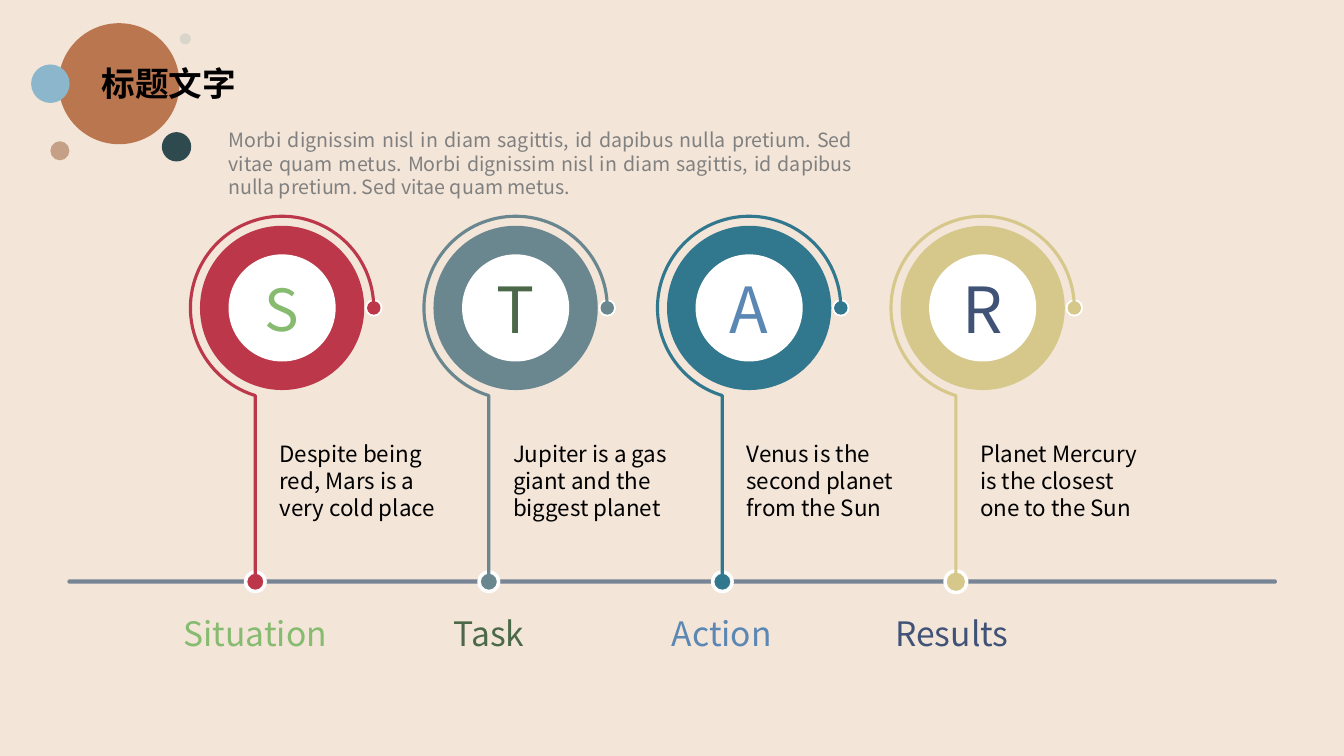
from math import cos, radians, sin

from lxml import etree
from pptx import Presentation
from pptx.dml.color import RGBColor
from pptx.enum import shapes, text
from pptx.oxml import ns
from pptx.util import Cm, Pt

FONT = "Noto Sans CJK SC"
COLOURS = {
    "sand": "F3E5D8", "white": "FFFFFF", "black": "000000", "grey": "808080",
    "slate": "778495", "red": "BD374A", "steel": "6A868F", "teal": "31778E",
    "straw": "D6C88B", "lime": "86BB70", "forest": "4B6949", "blue": "5B87B4",
    "navy": "405377", "copper": "BA764F", "sky": "8BB6CB", "tan": "C5A086",
    "pine": "2E4A4E", "pearl": "D9D5CA",
}
TITLE = "标题文字"
INTRO = ("Morbi dignissim nisl in diam sagittis, id dapibus nulla pretium. "
         "Sed vitae quam metus. Morbi dignissim nisl in diam sagittis, "
         "id dapibus nulla pretium. Sed vitae quam metus.")
# letter, letter size, label, label centre, description, ring colour, text colour
STEPS = [
    ("S", 41.4, "Situation", 6.43, "Despite being red, Mars is a very cold place",
     "red", "lime"),
    ("T", 45.4, "Task", 12.33, "Jupiter is a gas giant and the biggest planet",
     "steel", "forest"),
    ("A", 45.4, "Action", 18.19, "Venus is the second planet from the Sun",
     "teal", "blue"),
    ("R", 45.4, "Results", 23.99, "Planet Mercury is the closest one to the Sun",
     "straw", "navy"),
]
# centre x, centre y, diameter, colour
BUBBLES = [
    (3.0, 2.11, 3.05, "copper"), (1.27, 2.11, 0.97, "sky"),
    (1.51, 3.8, 0.48, "tan"), (4.45, 3.7, 0.74, "pine"),
    (4.67, 0.98, 0.28, "pearl"),
]

FIRST_X, STEP_X, CENTRE_Y = 7.11, 5.885, 7.76
RING_RADIUS, RING_END = 2.31, -253
BASE_Y = 14.66
INSET = 0.33


def colour(name):
    return RGBColor.from_string(COLOURS[name])


def paint(shape, fill=None, line=None, width=1.5):
    shape.shadow.inherit = False
    if fill:
        shape.fill.solid()
        shape.fill.fore_color.rgb = colour(fill)
    else:
        shape.fill.background()
    if line:
        shape.line.color.rgb = colour(line)
        shape.line.width = Pt(width)
    else:
        shape.line.fill.background()


def add_circle(parent, x, y, diameter, fill, line=None):
    """Draw a circle around the centre (x, y)."""
    circle = parent.add_shape(
        shapes.MSO_SHAPE.OVAL, Cm(x - diameter / 2), Cm(y - diameter / 2),
        Cm(diameter), Cm(diameter))
    paint(circle, fill, line)
    return circle


def write(box, words, size, ink, align=text.PP_ALIGN.LEFT,
          anchor=text.MSO_ANCHOR.MIDDLE, inset=None, bold=False):
    frame = box.text_frame
    frame.word_wrap = True
    frame.vertical_anchor = anchor
    if inset is not None:
        frame.margin_left = frame.margin_right = Cm(inset)
        frame.margin_top = frame.margin_bottom = Cm(inset)
    para = frame.paragraphs[0]
    para.alignment = align
    span = para.add_run()
    span.text = words
    span.font.name = FONT
    span.font.size = Pt(size)
    span.font.bold = bold
    span.font.color.rgb = colour(ink)
    east_asian = etree.SubElement(span.font._element, ns.qn("a:ea"))
    east_asian.set("typeface", FONT)
    return frame


def add_text(page, left, top, width, height, *args, **kwargs):
    box = page.shapes.add_textbox(Cm(left), Cm(top), Cm(width), Cm(height))
    return write(box, *args, **kwargs)


def add_ring(page, x, tint):
    """Draw an open ring that runs on as a stem down to the timeline."""
    points = [(Cm(x + RING_RADIUS * cos(radians(angle))),
               Cm(CENTRE_Y + RING_RADIUS * sin(radians(angle))))
              for angle in [*range(0, RING_END, -3), RING_END]]
    stem_x = points[-1][0]
    builder = page.shapes.build_freeform(*points[0], scale=1.0)
    builder.add_line_segments(points[1:] + [(stem_x, Cm(BASE_Y))], close=False)
    paint(builder.convert_to_shape(), line=tint, width=2.25)


def add_header(page):
    add_text(page, 5.51, 3.1, 16.23, 2.06, INTRO, 14, "grey",
             text.PP_ALIGN.JUSTIFY, text.MSO_ANCHOR.TOP)
    bubbles = page.shapes.add_group_shape()
    for bubble in BUBBLES:
        add_circle(bubbles.shapes, *bubble)
    title = page.shapes.title
    title.left, title.top, title.width, title.height = (
        Cm(2.31), Cm(1.47), Cm(3.94), Cm(1.27))
    frame = write(title, TITLE, 24, "black", anchor=text.MSO_ANCHOR.TOP, bold=True)
    frame.word_wrap = False
    frame.auto_size = text.MSO_AUTO_SIZE.SHAPE_TO_FIT_TEXT
    # The title stands in front of the bubbles
    title.element.getparent().append(title.element)


def add_step(page, index, step):
    letter, size, label, label_x, description, tint, ink = step
    x = FIRST_X + index * STEP_X
    stem_x = x + RING_RADIUS * cos(radians(RING_END))
    is_last = index == len(STEPS) - 1
    add_circle(page.shapes, x + RING_RADIUS, CENTRE_Y, 0.44, "white")
    add_circle(page.shapes, x + RING_RADIUS, CENTRE_Y, 0.34, tint)
    add_circle(page.shapes, stem_x, BASE_Y, 0.58, "white", "white" if is_last else None)
    add_circle(page.shapes, stem_x, BASE_Y, 0.46, tint, None if is_last else "white")
    add_ring(page, x, tint)
    add_circle(page.shapes, x, CENTRE_Y, 4.14, tint)
    hole = add_circle(page.shapes, x, CENTRE_Y, 2.7, "white")
    write(hole, letter, size, ink, text.PP_ALIGN.CENTER, inset=INSET)
    add_text(page, stem_x + 0.28, 10.82, 4.62, 2.59, description, 16, "black",
             inset=INSET)
    label_width = 6
    add_text(page, label_x - label_width / 2, 15.27, label_width, 1.35, label, 24, ink,
             text.PP_ALIGN.CENTER, inset=INSET)


def main():
    deck = Presentation()
    deck.slide_width, deck.slide_height = Cm(33.87), Cm(19.05)
    page = deck.slides.add_slide(deck.slide_layouts[5])
    page.background.fill.solid()
    page.background.fill.fore_color.rgb = colour("sand")

    add_header(page)
    timeline = page.shapes.add_shape(
        shapes.MSO_SHAPE.ROUNDED_RECTANGLE, Cm(1.7), Cm(14.6), Cm(30.48), Cm(0.11))
    timeline.adjustments[0] = 0.5
    paint(timeline, "slate")
    for index, step in enumerate(STEPS):
        add_step(page, index, step)
    deck.save("out.pptx")


if __name__ == "__main__":
    main()
